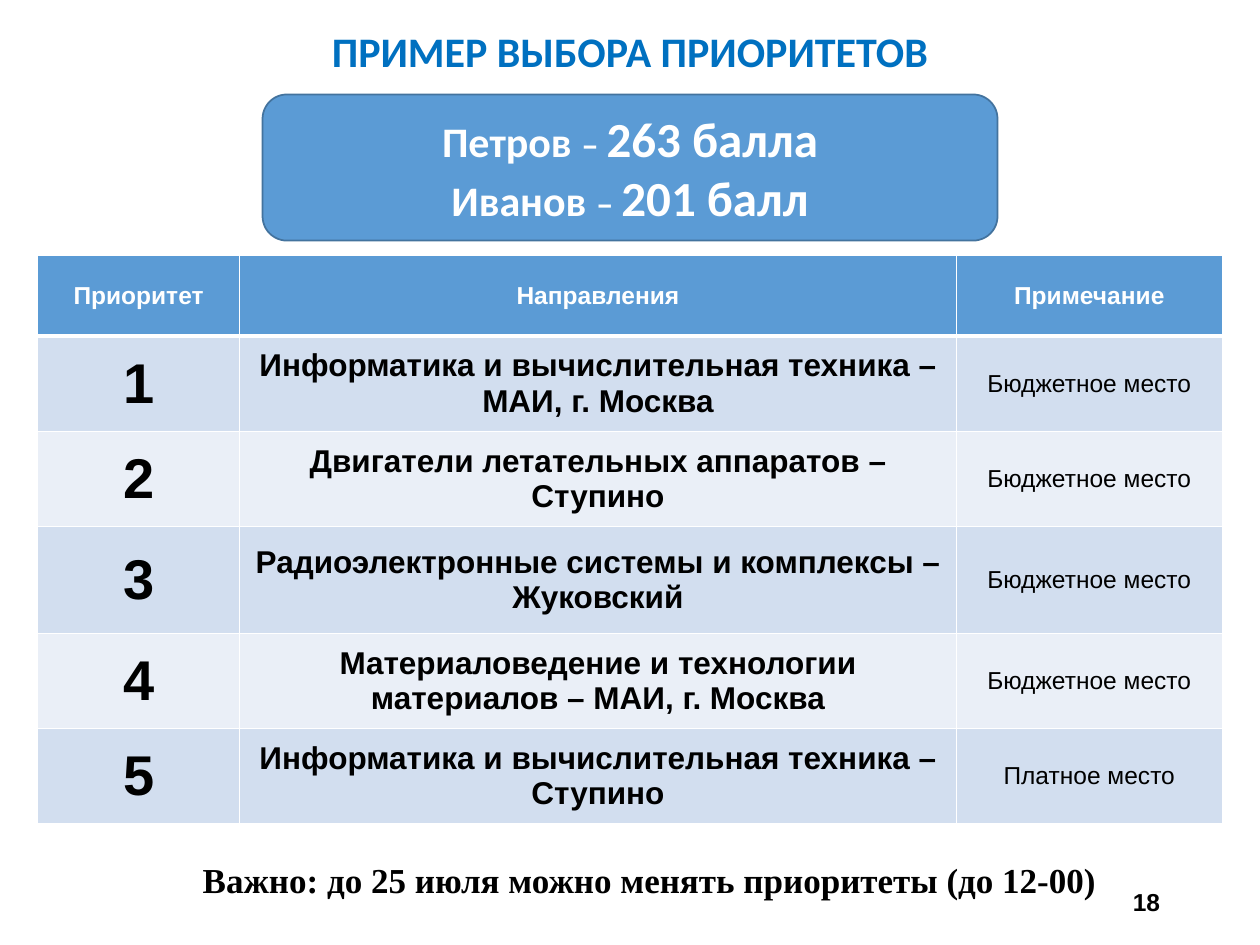
import pptx
import pptx.dml.color
import pptx.enum.shapes
import pptx.enum.text
import pptx.oxml.ns
import pptx.util
from lxml import etree

Pt = pptx.util.Pt
ALIGN = pptx.enum.text.PP_ALIGN
ANCHOR = pptx.enum.text.MSO_ANCHOR
BLUE = "5B9BD5"
BANDS = ("D2DEEF", "EAEFF7")


def color(value):
    return pptx.dml.color.RGBColor.from_string(value)


def add_text(p, text, size=14, font="Arial", fill="000000", bold=True,
             align=ALIGN.CENTER, indent=0):
    p.alignment = align
    if indent:
        p._p.get_or_add_pPr().set("indent", str(Pt(indent)))
    r = p.add_run()
    r.text = text
    r.font.size = Pt(size)
    r.font.name = font
    r.font.bold = bold
    r.font.color.rgb = color(fill)


def add_textbox(s, box, text, anchor=ANCHOR.TOP, **fmt):
    tf = s.shapes.add_textbox(*map(Pt, box)).text_frame
    tf.word_wrap = True
    tf.vertical_anchor = anchor
    add_text(tf.paragraphs[0], text, **fmt)


def add_title(s, box, text):
    sp = s.shapes.title
    sp.left, sp.top, sp.width, sp.height = map(Pt, box)
    tf = sp.text_frame
    tf.auto_size = pptx.enum.text.MSO_AUTO_SIZE.NONE
    tf.vertical_anchor = ANCHOR.TOP
    add_text(tf.paragraphs[0], text, size=24, font="Calibri", fill="0070C0")


def add_scores(s, box, scores):
    shape_type = pptx.enum.shapes.MSO_SHAPE.FLOWCHART_ALTERNATE_PROCESS
    sp = s.shapes.add_shape(shape_type, *map(Pt, box))
    sp.shadow.inherit = False
    sp.fill.solid()
    sp.fill.fore_color.rgb = color(BLUE)
    sp.line.color.rgb = color("43739E")
    sp.line.width = Pt(1)
    tf = sp.text_frame
    tf.vertical_anchor = ANCHOR.MIDDLE
    for i, (name, score) in enumerate(scores):
        p = tf.add_paragraph() if i else tf.paragraphs[0]
        for text, size in ((name + " ", 24), ("– ", 20), (score, 28)):
            add_text(p, text, size=size, font="Calibri", fill="FFFFFF")


def set_borders(cell, **widths):
    tcPr = cell._tc.get_or_add_tcPr()
    for side in "LRTB":
        ln = etree.SubElement(tcPr, pptx.oxml.ns.qn("a:ln" + side),
                              w=str(Pt(widths.get(side, 1))))
        fill = etree.SubElement(ln, pptx.oxml.ns.qn("a:solidFill"))
        etree.SubElement(fill, pptx.oxml.ns.qn("a:srgbClr"), val="FFFFFF")


def add_priorities(s, box, col_widths, row_heights, header, rows):
    table = s.shapes.add_table(len(rows) + 1, len(header),
                               *map(Pt, box)).table
    for col, width in zip(table.columns, col_widths):
        col.width = Pt(width)
    for row, height in zip(table.rows, row_heights):
        row.height = Pt(height)
    body_formats = ({"size": 32}, {"size": 18}, {"bold": False})
    numbered = [(str(n), *row) for n, row in enumerate(rows, 1)]
    for i, values in enumerate([header] + numbered):
        for j, value in enumerate(values):
            cell = table.cell(i, j)
            cell.vertical_anchor = ANCHOR.MIDDLE
            set_borders(cell, **{0: {"B": 3}, 1: {"T": 3}}.get(i, {}))
            cell.fill.solid()
            cell.fill.fore_color.rgb = color(BANDS[(i - 1) % 2] if i else BLUE)
            fmt = body_formats[j] if i else {"fill": "FFFFFF"}
            tf = cell.text_frame
            for k, line in enumerate(value.split("\n")):
                p = tf.add_paragraph() if k else tf.paragraphs[0]
                add_text(p, line, **fmt)


def main():
    prs = pptx.Presentation()
    prs.slide_width, prs.slide_height = Pt(720), Pt(540)
    s = prs.slides.add_slide(prs.slide_layouts[5])
    add_title(s, (51, 11, 618, 36), "ПРИМЕР ВЫБОРА ПРИОРИТЕТОВ")
    add_textbox(s, (508, 500.5, 162, 29), "18", anchor=ANCHOR.MIDDLE,
                align=ALIGN.RIGHT)
    add_priorities(
        s, (21.5, 146, 677, 325), (115.5, 409.5, 152),
        (46, 54.5, 54.5, 61, 54.5, 54.5),
        ("Приоритет", "Направления", "Примечание"),
        [
            ("Информатика и вычислительная техника – МАИ, г. Москва",
             "Бюджетное место"),
            ("Двигатели летательных аппаратов –\nСтупино",
             "Бюджетное место"),
            ("Радиоэлектронные системы и комплексы – Жуковский",
             "Бюджетное место"),
            ("Материаловедение и технологии материалов – МАИ, г. Москва",
             "Бюджетное место"),
            ("Информатика и вычислительная техника – Ступино",
             "Платное место"),
        ])
    add_textbox(s, (72, 487, 569.5, 31.5),
                "Важно: до 25 июля можно менять приоритеты (до 12-00)",
                size=20, font="Times New Roman", indent=28.8)
    add_scores(s, (150, 54, 420, 83.5),
               [("Петров", "263 балла"), ("Иванов", "201 балл")])
    prs.save("out.pptx")


if __name__ == "__main__":
    main()
